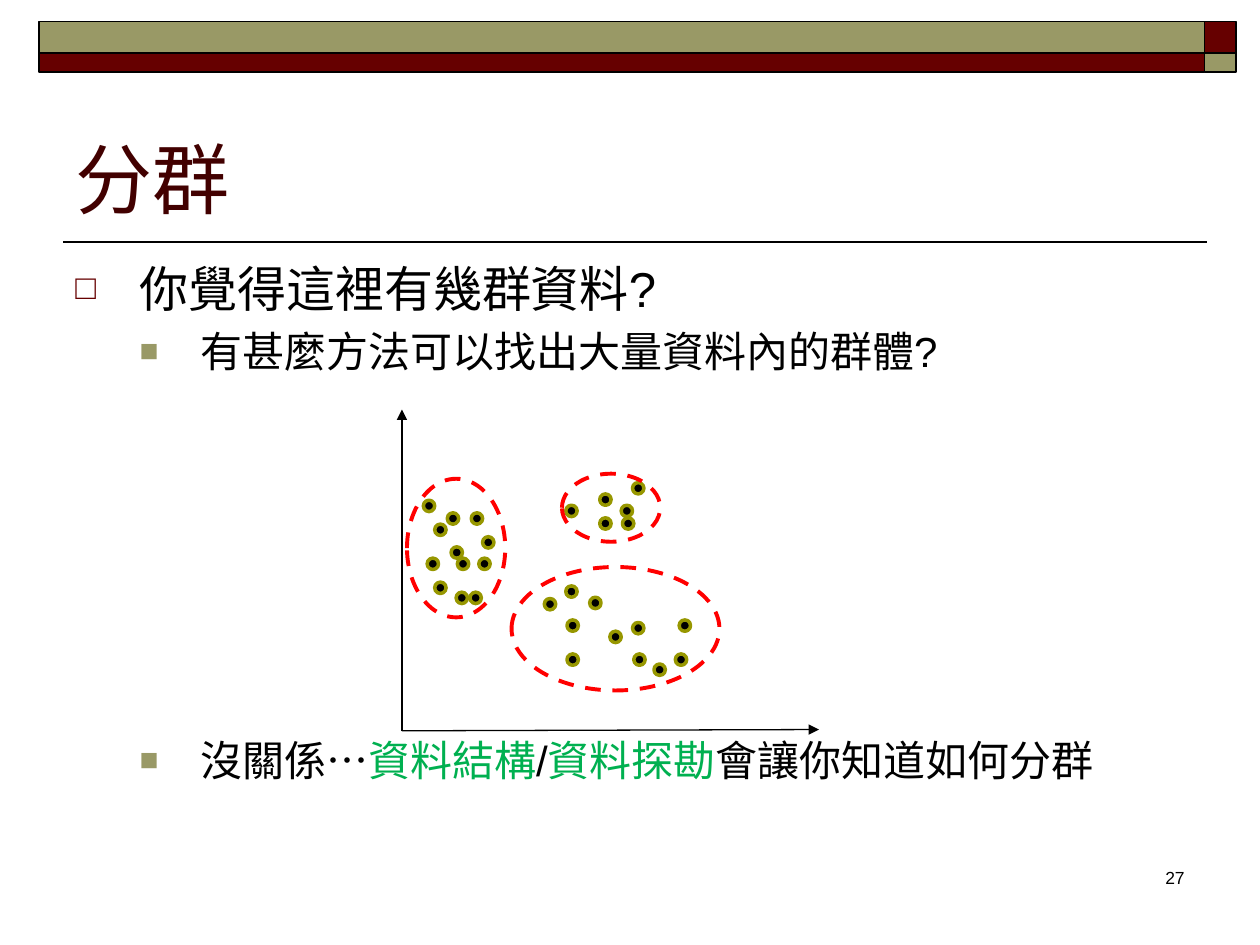
from lxml import etree
from pptx import Presentation
from pptx import util as u
from pptx.dml.color import RGBColor
from pptx.enum import dml, shapes, text
from pptx.oxml import ns

OLIVE, MAROON, BLACK, GREEN = "999966", "660000", "000000", "00B050"
FONT = "Arial"
DOT = 0.09
CLUSTERS = [
    ((3.23, 3.8, 0.78, 1.1),
     [(3.36, 3.97), (3.55, 4.07), (3.74, 4.07), (3.45, 4.16), (3.83, 4.26), (3.58, 4.34),
      (3.39, 4.43), (3.63, 4.43), (3.8, 4.43), (3.45, 4.62), (3.62, 4.7), (3.73, 4.7)]),
    ((4.46, 3.76, 0.78, 0.54),
     [(5.02, 3.83), (4.76, 3.92), (4.49, 4.01), (4.93, 4.01), (4.76, 4.11), (4.94, 4.11)]),
    ((4.06, 4.5, 1.65, 0.98),
     [(4.49, 4.65), (4.68, 4.74), (4.32, 4.75), (4.5, 4.92), (5.39, 4.92), (5.02, 4.94),
      (4.84, 5.01), (4.5, 5.19), (5.03, 5.19), (5.36, 5.19), (5.19, 5.27)]),
]
BULLETS = [
    (0, "□", MAROON, 70, 28, 0, [("你覺得這裡有幾群資料?", BLACK)]),
    (1, "■", OLIVE, 75, 24, 4.8, [("有甚麼方法可以找出大量資料內的群體?", BLACK)]),
    (1, "■", OLIVE, 75, 24, 205,
     [("沒關係…", BLACK), ("資料結構", GREEN), ("/", BLACK), ("資料探勘", GREEN),
      ("會讓你知道如何分群", BLACK)]),
]
INDENTS = [(0.51, -0.51), (0.99, -0.48)]


def rgb(value):
    """Turn a hex string into a colour."""
    return RGBColor.from_string(value)


def inches(*values):
    """Convert numbers to lengths in inches."""
    return [u.Inches(v) for v in values]


def add_element(parent, tag, **attributes):
    """Append a drawing element to a parent."""
    return etree.SubElement(parent, ns.qn(tag), attributes)


def style_font(font, size, color):
    """Set typeface, size and colour."""
    font.name, font.size = FONT, u.Pt(size)
    font.color.rgb = rgb(color)


def add_block(s, kind, box, fill, line, width, dashed=False):
    """Draw a preset shape, hollow when fill is None."""
    sp = s.shapes.add_shape(kind, *inches(*box))
    sp.shadow.inherit = False
    if fill:
        sp.fill.solid()
        sp.fill.fore_color.rgb = rgb(fill)
    else:
        sp.fill.background()
    sp.line.color.rgb = rgb(line)
    sp.line.width = u.Pt(width)
    if dashed:
        sp.line.dash_style = dml.MSO_LINE.DASH


def add_line(s, start, end, width, arrow=False):
    """Draw a straight black line, with an arrowhead if asked."""
    c = s.shapes.add_connector(shapes.MSO_CONNECTOR.STRAIGHT, *inches(*start, *end))
    c.line.color.rgb = rgb(BLACK)
    c.line.width = u.Pt(width)
    if arrow:
        add_element(c.line._get_or_add_ln(), "a:tailEnd", type="triangle")
    add_element(c._element.spPr, "a:effectLst")


def add_header(s):
    """Draw the two-by-two colour band and the rule under the title."""
    columns, rows = [(0.31, 9.25), (9.56, 0.25)], [(0.17, 0.25), (0.42, 0.15)]
    for i, (x, w) in enumerate(columns):
        for j, (y, h) in enumerate(rows):
            fill = MAROON if (i + j) % 2 else OLIVE
            add_block(s, shapes.MSO_SHAPE.RECTANGLE, (x, y, w, h), fill, BLACK, 1)
    add_line(s, (0.5, 1.92), (9.58, 1.92), 1)


def set_title(s, title):
    """Place and format the title placeholder."""
    sp = s.shapes.title
    sp.left, sp.top, sp.width, sp.height = inches(0.5, 0.58, 9, 1.25)
    tf = sp.text_frame
    tf.text = title
    tf.vertical_anchor = text.MSO_ANCHOR.BOTTOM
    p = tf.paragraphs[0]
    p.alignment = text.PP_ALIGN.LEFT
    style_font(p.runs[0].font, 44, "420000")


def add_text_box(s, box):
    """Add a wrapping text box and return its frame."""
    tf = s.shapes.add_textbox(*inches(*box)).text_frame
    tf.word_wrap = True
    return tf


def add_bullets(s):
    """Write the bulleted text around the chart area."""
    tf = add_text_box(s, (0.5, 2, 9, 4.7))
    for i, (level, char, color, share, size, before, runs) in enumerate(BULLETS):
        p = tf.add_paragraph() if i else tf.paragraphs[0]
        p.level = level
        pPr = p._p.get_or_add_pPr()
        margin, indent = inches(*INDENTS[level])
        pPr.set("marL", str(margin))
        pPr.set("indent", str(indent))
        add_element(add_element(pPr, "a:buClr"), "a:srgbClr", val=color)
        add_element(pPr, "a:buSzPct", val=str(share * 1000))
        add_element(pPr, "a:buFont", typeface=FONT)
        add_element(pPr, "a:buChar", char=char)
        p.space_before = u.Pt(before)
        for content, run_color in runs:
            r = p.add_run()
            r.text = content
            style_font(r.font, size, run_color)


def add_scatter(s):
    """Draw the axes, the points and the ring around each cluster."""
    origin = (3.19, 5.8)
    for end in [(6.5, 5.79), (3.19, 3.25)]:
        add_line(s, origin, end, 0.75, arrow=True)
    for ring, points in CLUSTERS:
        for x, y in points:
            add_block(s, shapes.MSO_SHAPE.OVAL, (x, y, DOT, DOT), BLACK, "979700", 2)
        add_block(s, shapes.MSO_SHAPE.OVAL, ring, None, "FF0000", 2.25, dashed=True)


def add_page_number(s, number):
    """Write the page number at the lower right."""
    p = add_text_box(s, (7.42, 6.83, 2.08, 0.5)).paragraphs[0]
    p.text = number
    p.alignment = text.PP_ALIGN.RIGHT
    style_font(p.runs[0].font, 10, BLACK)


def main():
    """Build and save the slide."""
    prs = Presentation()
    prs.slide_width, prs.slide_height = inches(10, 7.5)
    s = prs.slides.add_slide(prs.slide_layouts[5])
    add_header(s)
    set_title(s, "分群")
    add_bullets(s)
    add_page_number(s, "27")
    add_scatter(s)
    prs.save("out.pptx")


if __name__ == "__main__":
    main()
